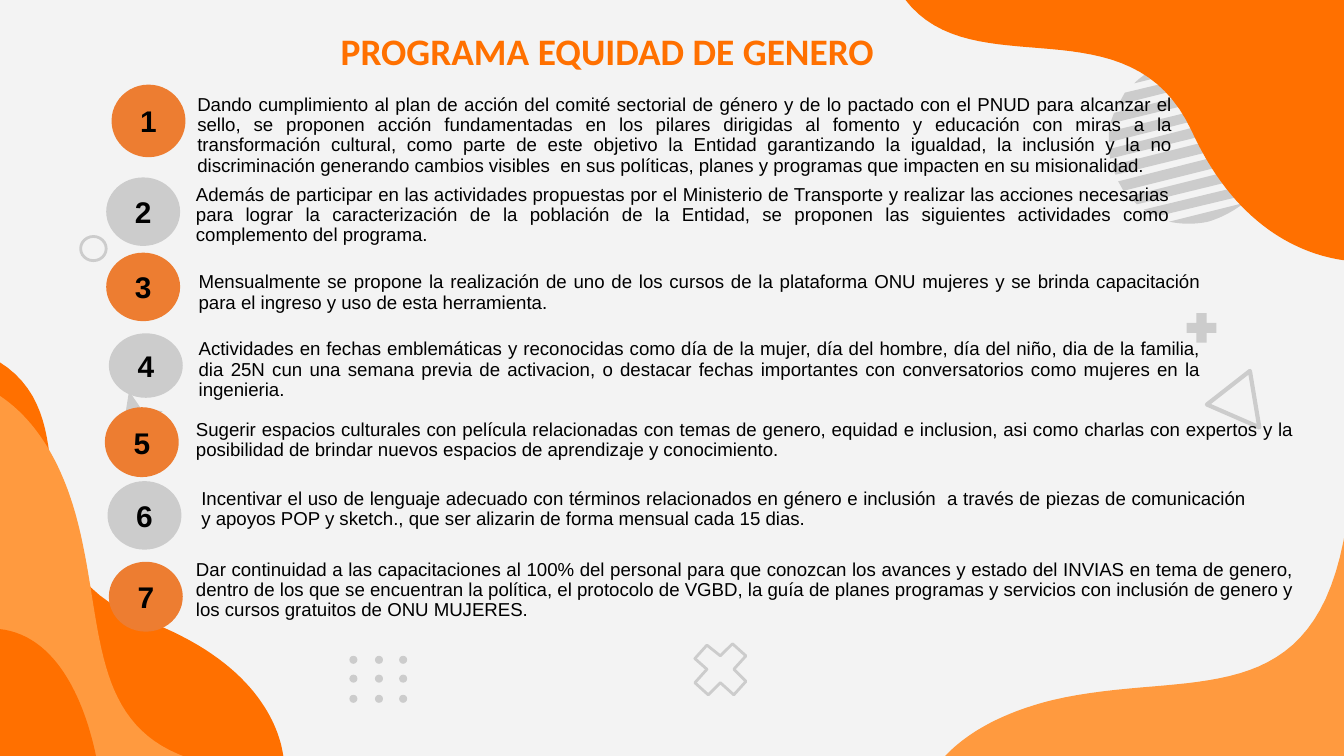
"""Build the gender equity programme slide."""
from pptx import Presentation
from pptx.dml.color import RGBColor
from pptx.enum.shapes import MSO_SHAPE as Shape
from pptx.enum.text import MSO_ANCHOR as Anchor, PP_ALIGN as Align
from pptx.util import Pt

PX = 9144
CURVE_STEPS = 32
COLORS = {
    "back": "F3F3F3",
    "orange": "FF7000",
    "light": "FF9A3F",
    "badge": "ED7D31",
    "gray": "CCCCCC",
    "black": "000000",
}


def paint(shape, fill=None, line=None, weight=1.5):
    shape.shadow.inherit = False
    if fill:
        shape.fill.solid()
        shape.fill.fore_color.rgb = RGBColor.from_string(COLORS[fill])
    else:
        shape.fill.background()
    if line:
        shape.line.color.rgb = RGBColor.from_string(COLORS[line])
        shape.line.width = Pt(weight)
    else:
        shape.line.fill.background()


def write(frame, text, size=10, font="Arial", color="black", bold=False,
          align=Align.JUSTIFY, anchor=Anchor.TOP, spacing=None):
    frame.word_wrap = True
    frame.vertical_anchor = anchor
    para = frame.paragraphs[0]
    para.alignment = align
    para.line_spacing = spacing
    span = para.add_run()
    span.text = text
    span.font.size = Pt(size)
    span.font.name = font
    span.font.bold = bold
    span.font.color.rgb = RGBColor.from_string(COLORS[color])


deck = Presentation()
deck.slide_width = 1000 * PX
deck.slide_height = deck.slide_width * 9 // 16
page = deck.slides.add_slide(deck.slide_layouts[6])
page.background.fill.solid()
page.background.fill.fore_color.rgb = RGBColor.from_string(COLORS["back"])

# A step of two numbers is a corner; a step of six is a Bézier curve.
stripes = [
    [(880, 53), (875, 47), (874, 47, 872, 48, 870, 48), (860, 50, 851, 55, 844, 62)],
    [(888, 64), (883, 58), (837, 69), (832, 78)],
    [(896, 75), (891, 69), (829, 84), (826, 92)],
    [(904, 86), (899, 80), (825, 98), (825, 106)],
    [(912, 97), (907, 90), (825, 111), (826, 118)],
    [(920, 108), (915, 101), (827, 123), (830, 130)],
    [(928, 119), (923, 112), (832, 135), (836, 142)],
    [(936, 130), (932, 123), (840, 146), (846, 152)],
    [(932, 144), (938, 135), (851, 156), (861, 161)],
    [(926, 151), (870, 165), (879, 167, 890, 167, 899, 165), (909, 162, 918, 157, 926, 151)],
]
top_blob = [(1002, -1), (1003, 194), (975, 191, 922, 174, 887, 98), (841, -2, 724, 67, 673, -1)]
left_back = [(-1, 564), (211, 564), (208, 540, 190, 492, 107, 461), (-2, 420, 73, 315, -1, 269)]
left_middle = [(-1, 564), (140, 564), (62, 537, 79, 456, 54, 375), (40, 331, 19, 307, -1, 294)]
left_front = [(72, 565), (66, 535, 48, 473, -1, 468), (-1, 565)]
bottom_blob = [(1002, 565), (1002, 389), (980, 536, 884, 497, 783, 521), (743, 531, 717, 547, 701, 565)]
small_triangle = [(105, 304), (96, 291), (90, 329), (121, 306)]
open_cross = [(546, 517), (555, 507), (546, 498), (555, 488), (545, 479), (536, 488),
              (526, 480), (517, 490), (526, 498), (517, 508), (527, 517), (536, 508)]
open_triangle = [(937, 318), (930, 276), (898, 301)]

outlines = [(stripe, {"fill": "gray"}) for stripe in stripes] + [
    (top_blob, {"fill": "orange"}),
    (left_back, {"fill": "orange"}),
    (left_middle, {"fill": "light"}),
    (left_front, {"fill": "orange"}),
    (bottom_blob, {"fill": "light"}),
    (small_triangle, {"fill": "gray"}),
    (open_cross, {"line": "gray"}),
    (open_triangle, {"line": "gray", "weight": 2.25}),
]
for steps, style in outlines:
    points = [steps[0]]
    for step in steps[1:]:
        if len(step) == 2:
            points.append(step)
            continue
        x0, y0 = points[-1]
        x1, y1, x2, y2, x3, y3 = step
        for i in range(1, CURVE_STEPS + 1):
            t = i / CURVE_STEPS
            a, b, c, d = (1 - t) ** 3, 3 * t * (1 - t) ** 2, 3 * t * t * (1 - t), t ** 3
            points.append((a * x0 + b * x1 + c * x2 + d * x3,
                           a * y0 + b * y1 + c * y2 + d * y3))
    corners = [(x * PX, y * PX) for x, y in points]
    builder = page.shapes.build_freeform(*corners[0], scale=1.0)
    builder.add_line_segments(corners[1:], close=True)
    paint(builder.convert_to_shape(), **style)

ring = page.shapes.add_shape(Shape.OVAL, 60 * PX, 176 * PX, 19 * PX, 18 * PX)
paint(ring, line="gray")
plus = page.shapes.add_shape(Shape.CROSS, 883 * PX, 233 * PX, 22 * PX, 22 * PX)
plus.adjustments[0] = 0.33
paint(plus, fill="gray")
for top in (488, 502, 517):
    for left in (260, 279, 297):
        dot = page.shapes.add_shape(Shape.OVAL, left * PX, top * PX, 6 * PX, 6 * PX)
        paint(dot, fill="gray")

title = page.shapes.add_textbox(40 * PX, 9 * PX, 824 * PX, 57 * PX)
write(title.text_frame, "PROGRAMA EQUIDAD DE GENERO", size=20, font="Calibri",
      color="orange", bold=True, align=Align.CENTER, anchor=Anchor.MIDDLE)

items = [
    ((83, 63, 55, 54), (137, 66, 744, 71),
     "Dando cumplimiento al plan de acción del comité sectorial de género y de lo pactado con el PNUD para alcanzar el sello, se proponen acción fundamentadas en los pilares dirigidas al fomento y educación con miras a la transformación cultural, como parte de este objetivo la Entidad garantizando la igualdad, la inclusión y la no discriminación generando cambios visibles  en sus políticas, planes y programas que impacten en su misionalidad."),
    ((79, 132, 55, 51), (136, 133, 743, 71),
     "Además de participar en las actividades propuestas por el Ministerio de Transporte y realizar las acciones necesarias para lograr la caracterización de la población de la Entidad, se proponen las siguientes actividades como complemento del programa. "),
    ((79, 188, 55, 51), (138, 198, 764, 40),
     "Mensualmente se propone la realización de uno de los cursos de la plataforma ONU mujeres y se brinda capacitación para el ingreso y uso de esta herramienta."),
    ((81, 248, 55, 48), (138, 248, 764, 56),
     "Actividades en fechas emblemáticas y reconocidas como día de la mujer, día del hombre, día del niño, dia de la familia, dia 25N cun una semana previa de activacion, o destacar fechas importantes con conversatorios como mujeres en la ingenieria."),
    ((78, 303, 55, 52), (136, 308, 835, 40),
     "Sugerir espacios culturales con película relacionadas con temas de genero, equidad e inclusion, asi como charlas con expertos y la posibilidad de brindar nuevos espacios de aprendizaje y conocimiento."),
    ((80, 358, 55, 51), (140, 359, 796, 40),
     "Incentivar el uso de lenguaje adecuado con términos relacionados en género e inclusión  a través de piezas de comunicación y apoyos POP y sketch., que ser alizarin de forma mensual cada 15 dias. "),
    ((81, 418, 55, 52), (136, 412, 835, 56),
     "Dar continuidad a las capacitaciones al 100% del personal para que conozcan los avances y estado del INVIAS en tema de genero, dentro de los que se encuentran la política, el protocolo de VGBD, la guía de planes programas y servicios con inclusión de genero y los cursos gratuitos de ONU MUJERES."),
]
for number, (badge_area, text_area, text) in enumerate(items, 1):
    badge = page.shapes.add_shape(Shape.OVAL, *(v * PX for v in badge_area))
    paint(badge, fill="badge" if number % 2 else "gray")
    write(badge.text_frame, str(number), size=16, bold=True,
          align=Align.CENTER, anchor=Anchor.MIDDLE)
    box = page.shapes.add_textbox(*(v * PX for v in text_area))
    write(box.text_frame, text, spacing=0.9)

deck.save("out.pptx")
